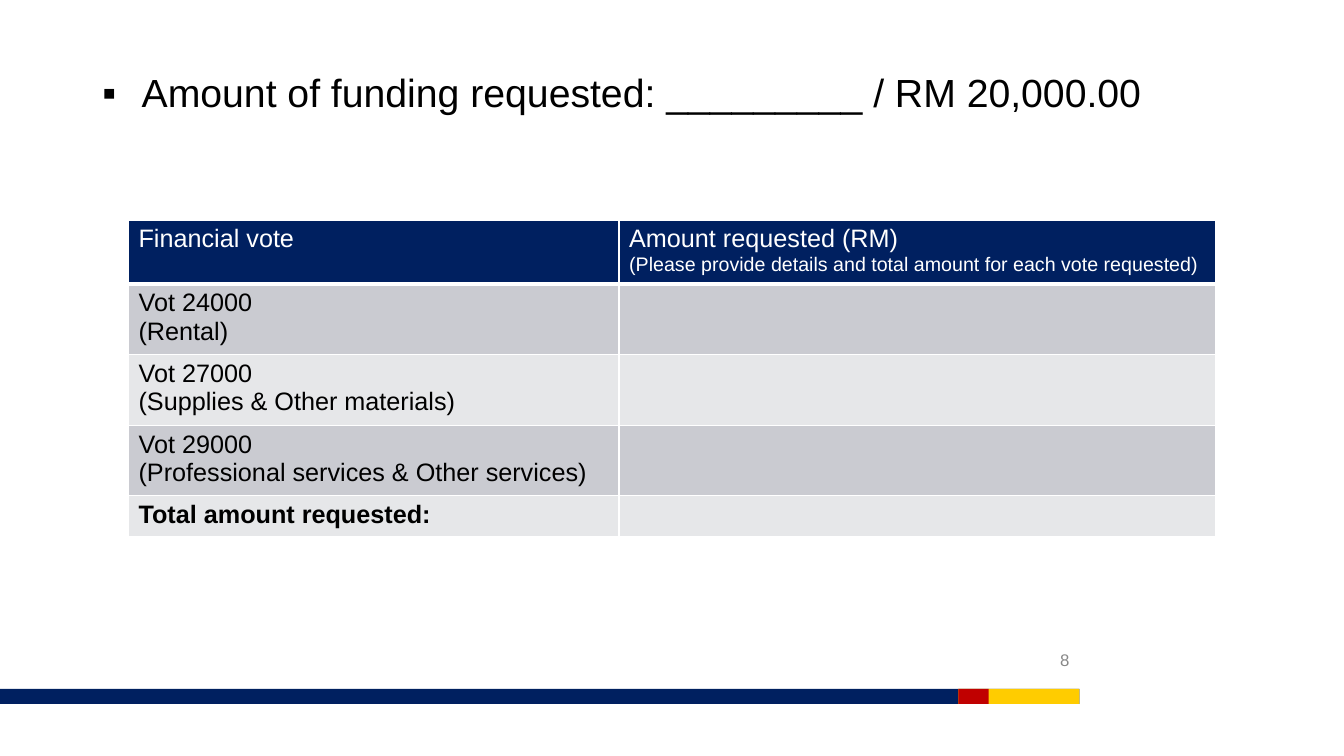
"""Build the funding request slide with its vote table."""
import pptx
import pptx.dml.color
import pptx.enum.shapes
import pptx.enum.text
import pptx.oxml
import pptx.oxml.ns
import pptx.util
from lxml import etree

NAVY = pptx.dml.color.RGBColor(0x00, 0x20, 0x60)
GOLD = pptx.dml.color.RGBColor(0xFF, 0xCC, 0x00)
RED = pptx.dml.color.RGBColor(0xC0, 0x00, 0x00)
BLACK = pptx.dml.color.RGBColor(0x00, 0x00, 0x00)
WHITE = pptx.dml.color.RGBColor(0xFF, 0xFF, 0xFF)
GREY = pptx.dml.color.RGBColor(0x88, 0x88, 0x88)
DARK_BAND = pptx.dml.color.RGBColor(0xCA, 0xCB, 0xD1)
LIGHT_BAND = pptx.dml.color.RGBColor(0xE6, 0xE7, 0xE9)

ALIGN = pptx.enum.text.PP_ALIGN
ANCHOR = pptx.enum.text.MSO_ANCHOR
GRID_COLUMNS, GRID_ROWS = 160, 90


class FundingSlide:
    """Hold the style and the current slide, and draw on its grid."""

    typeface = "Arial"

    def __init__(self, deck):
        self.slide = deck.slides.add_slide(deck.slide_layouts[6])
        self.column = deck.slide_width / GRID_COLUMNS
        self.row = deck.slide_height / GRID_ROWS

    def place(self, left, top, width, height):
        """Turn grid columns and rows into slide lengths."""
        return (round(left * self.column), round(top * self.row),
                round(width * self.column), round(height * self.row))

    def apply(self, target, values):
        """Set each named attribute on the target."""
        for name, value in values.items():
            setattr(target, name, value)

    def style(self, paragraph, size, color, bold=False):
        """Give every run of a paragraph its font."""
        for run in paragraph.runs:
            self.apply(run.font, {"name": self.typeface, "bold": bold,
                                  "size": pptx.util.Pt(size)})
            run.font.color.rgb = color

    def band(self, color, *area):
        """Draw a plain filled rectangle."""
        strip = self.slide.shapes.add_shape(
            pptx.enum.shapes.MSO_SHAPE.RECTANGLE, *self.place(*area))
        strip.shadow.inherit = False
        strip.fill.solid()
        strip.fill.fore_color.rgb = color
        strip.line.fill.background()

    def text(self, words, area, size, color, frame_format, paragraph_format):
        """Write one paragraph in a text box and return it."""
        frame = self.slide.shapes.add_textbox(*self.place(*area)).text_frame
        self.apply(frame, {"word_wrap": True, **frame_format})
        paragraph = frame.paragraphs[0]
        paragraph.text = words
        self.apply(paragraph, paragraph_format)
        self.style(paragraph, size, color)
        return paragraph

    def bullet(self, paragraph, mark, color, indent):
        """Give a paragraph a hanging bullet."""
        properties = paragraph._p.get_or_add_pPr()
        hang = pptx.util.Inches(indent)
        properties.set("marL", str(hang))
        properties.set("indent", str(-hang))
        tint = etree.SubElement(properties, pptx.oxml.ns.qn("a:buClr"))
        etree.SubElement(tint, pptx.oxml.ns.qn("a:srgbClr"), val=str(color))
        etree.SubElement(properties, pptx.oxml.ns.qn("a:buFont"),
                         typeface=self.typeface)
        etree.SubElement(properties, pptx.oxml.ns.qn("a:buChar"), char=mark)

    def border(self, cell, widths):
        """Draw white borders of the given point widths around a cell."""
        properties = cell._tc.get_or_add_tcPr()
        for side, width in widths.items():
            edge = etree.SubElement(properties, pptx.oxml.ns.qn(f"a:ln{side}"),
                                    w=str(pptx.util.Pt(width)))
            fill = etree.SubElement(edge, pptx.oxml.ns.qn("a:solidFill"))
            etree.SubElement(fill, pptx.oxml.ns.qn("a:srgbClr"), val=str(WHITE))

    def table(self, left, top, widths, heights, content):
        """Draw the vote table with a header and alternating bands."""
        area = self.place(left, top, sum(widths), sum(heights))
        votes = self.slide.shapes.add_table(len(heights), len(widths), *area).table
        for column, width in zip(votes.columns, widths):
            column.width = round(width * self.column)
        for row, height in zip(votes.rows, heights):
            row.height = round(height * self.row)
        last = len(heights) - 1
        for r, entries in enumerate(content):
            header = r == 0
            band = NAVY if header else (LIGHT_BAND, DARK_BAND)[r % 2]
            for c, words in enumerate(entries):
                cell = votes.cell(r, c)
                self.border(cell, {"L": 1, "R": 1, "T": 3 if r == 1 else 1,
                                   "B": 3 if header else 1})
                cell.fill.solid()
                cell.fill.fore_color.rgb = band
                cell.text = words
                for line, paragraph in enumerate(cell.text_frame.paragraphs):
                    self.style(paragraph, 14 if header and line else 18,
                               WHITE if header else BLACK, r == last)


def main():
    """Assemble and save the slide."""
    deck = pptx.Presentation()
    deck.slide_width = pptx.util.Inches(13.33)
    deck.slide_height = pptx.util.Inches(7.5)
    page = FundingSlide(deck)

    for color, left, width in ((NAVY, 0, 128.5), (GOLD, 114.1, 14.4), (RED, 114.1, 3.6)):
        page.band(color, left, 82, width, 1.8)

    request = page.text("Amount of funding requested: _________ / RM 20,000.00",
                        (11, 8.2, 138, 67.2), 28, BLACK,
                        {"vertical_anchor": ANCHOR.TOP},
                        {"alignment": ALIGN.JUSTIFY, "line_spacing": 0.9})
    page.bullet(request, "▪", BLACK, 0.39)
    page.text("8", (115, 76.4, 13.5, 4.2), 12, GREY,
              {"vertical_anchor": ANCHOR.MIDDLE}, {"alignment": ALIGN.RIGHT})

    vote_height = 7.9
    page.table(15.3, 26.2, (58.4, 71), (7.2, *[vote_height] * 3, 4.9), (
        ("Financial vote",
         "Amount requested (RM)\n"
         "(Please provide details and total amount for each vote requested)"),
        ("Vot 24000\n(Rental)", ""),
        ("Vot 27000\n(Supplies & Other materials)", ""),
        ("Vot 29000\n(Professional services & Other services)", ""),
        ("Total amount requested:", ""),
    ))
    deck.save("out.pptx")


if __name__ == "__main__":
    main()
